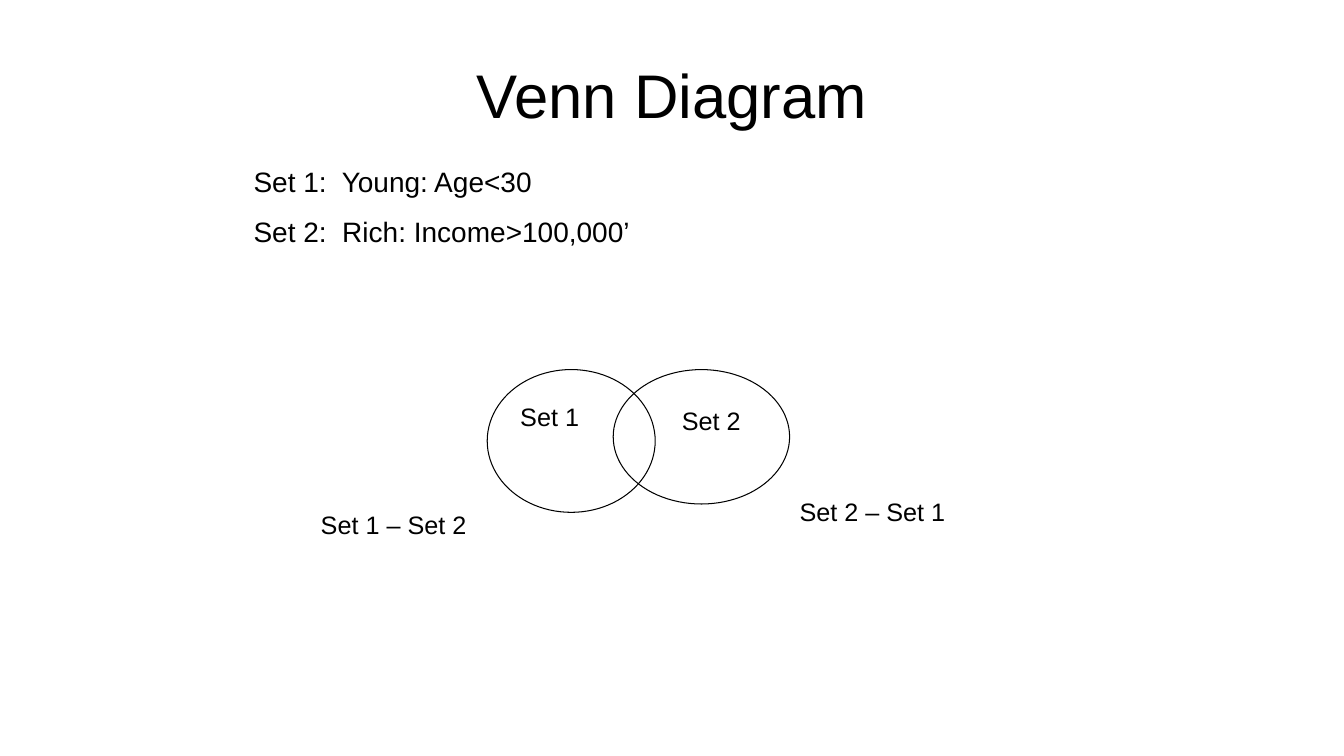
from pptx import Presentation
from pptx import util as u
from pptx.dml.color import RGBColor
from pptx.enum import shapes, text

PX = 9525
THEME = {
    "font": "Arial",
    "ink": RGBColor(0, 0, 0),
    "paper": RGBColor(255, 255, 255),
    "title": u.Pt(44),
    "body": u.Pt(20),
    "label": u.Pt(18),
    "outline": u.Pt(0.75),
    "paragraph_gap": u.Pt(11.3),
}


def add_text(slide, content, *, box, size, wrap=True, grow=True,
             align=text.PP_ALIGN.LEFT, anchor=text.MSO_ANCHOR.TOP):
    shape = slide.shapes.add_textbox(*(value * PX for value in box))
    frame = shape.text_frame
    frame.text = content
    frame.word_wrap = wrap
    frame.vertical_anchor = anchor
    if grow:
        frame.auto_size = text.MSO_AUTO_SIZE.SHAPE_TO_FIT_TEXT
    for index, paragraph in enumerate(frame.paragraphs):
        paragraph.alignment = align
        paragraph.font.name = THEME["font"]
        paragraph.font.size = size
        paragraph.font.color.rgb = THEME["ink"]
        if index:
            paragraph.space_before = THEME["paragraph_gap"]
    return shape


presentation = Presentation()
presentation.slide_width = 1280 * PX
presentation.slide_height = 720 * PX
slide = presentation.slides.add_slide(presentation.slide_layouts[6])
slide.background.fill.solid()
slide.background.fill.fore_color.rgb = THEME["paper"]

add_text(slide, "Venn Diagram", box=(64, 29, 1152, 120), size=THEME["title"], grow=False,
         align=text.PP_ALIGN.CENTER, anchor=text.MSO_ANCHOR.MIDDLE)
add_text(slide, "Set 1:  Young: Age<30\nSet 2:  Rich: Income>100,000’",
         box=(232, 152, 704, 90), size=THEME["body"])

set_circles = [(464, 352, 160, 136), (584, 352, 168, 128)]
for box in set_circles:
    circle = slide.shapes.add_shape(shapes.MSO_SHAPE.OVAL, *(value * PX for value in box))
    circle.shadow.inherit = False
    circle.fill.background()
    circle.line.color.rgb = THEME["ink"]
    circle.line.width = THEME["outline"]

set_labels = [
    ("Set 1 – Set 2", (296, 480, 224, 38), True),
    ("Set 1", (486, 377, 76, 38), False),
    ("Set 2", (640, 381, 76, 38), False),
    ("Set 2 – Set 1", (752, 468, 202, 38), True),
]
for label, box, wrap in set_labels:
    add_text(slide, label, box=box, size=THEME["label"], wrap=wrap)

presentation.save("out.pptx")
